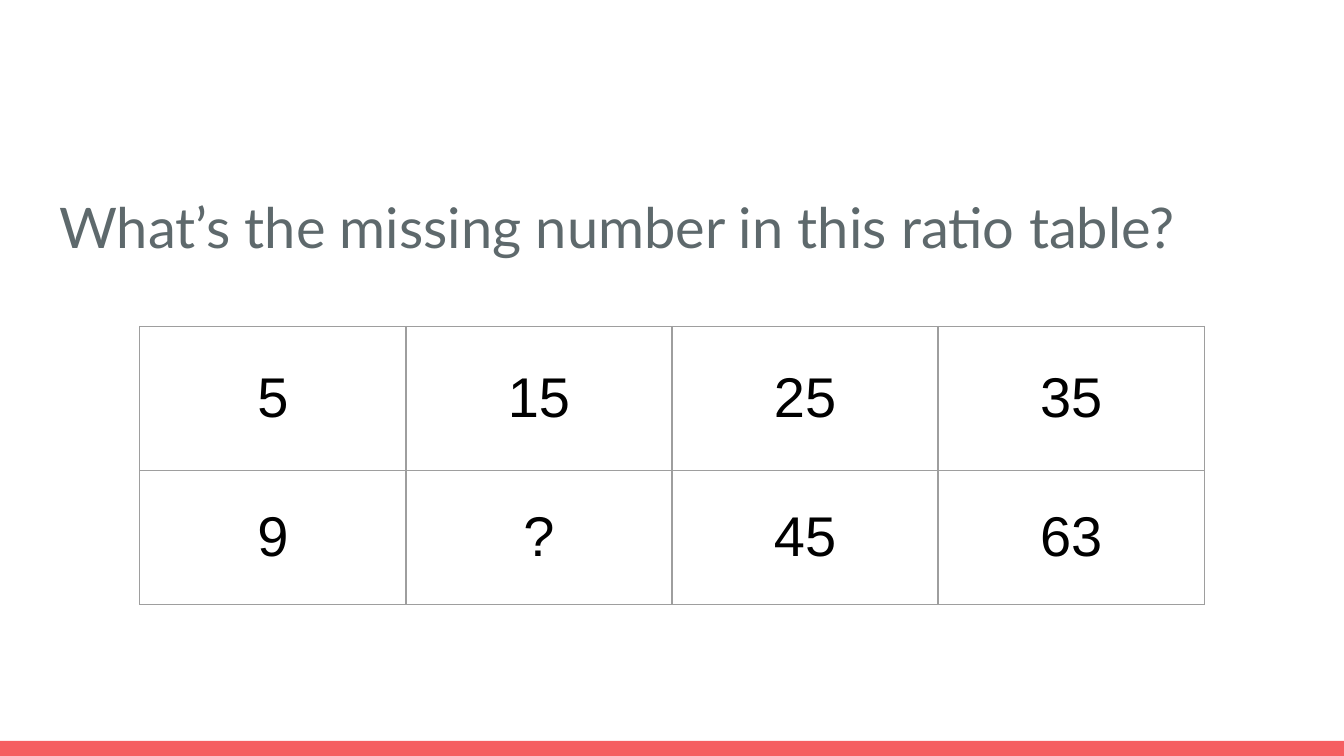
"""Build a slide that asks for the missing number in a ratio table."""
from lxml import etree
from pptx import Presentation
from pptx import util as u
from pptx.dml.color import RGBColor
from pptx.enum import shapes, text
from pptx.oxml.ns import qn

CORAL = RGBColor(0xF5, 0x5E, 0x61)
SLATE = RGBColor(0x5E, 0x69, 0x6C)
GREY = RGBColor(0x9E, 0x9E, 0x9E)
BLACK = RGBColor(0, 0, 0)

WIDTH = u.Inches(10)
HEIGHT = WIDTH * 9 // 16
INSET = u.Inches(0.1)
COLUMN = u.Inches(1.98)
ROW_HEIGHTS = u.Inches(1.07), u.Inches(1)
QUESTION = "What’s the missing number in this ratio table?"
RATIOS = [["5", "15", "25", "35"], ["9", "?", "45", "63"]]


def format_run(p, name, color):
    """Set the font of a paragraph's only run."""
    font = p.runs[0].font
    font.name, font.size, font.bold = name, u.Pt(30), False
    font.color.rgb = color


def set_insets(item):
    """Give a text frame or a cell equal margins."""
    item.margin_left = item.margin_right = INSET
    item.margin_top = item.margin_bottom = INSET


def add_footer_bar(s):
    """Add the coloured strip along the bottom edge."""
    height = round(HEIGHT * 0.02)
    bar = s.shapes.add_shape(shapes.MSO_SHAPE.RECTANGLE, 0, HEIGHT - height, WIDTH, height)
    bar.shadow.inherit = False
    bar.fill.solid()
    bar.fill.fore_color.rgb = CORAL
    bar.line.fill.background()


def fill_question(sp):
    """Place the body placeholder and write the question without a bullet."""
    sp.left, sp.top = u.Inches(0.34), u.Inches(1.26)
    sp.width, sp.height = WIDTH - 2 * sp.left, u.Inches(3.74)
    tf = sp.text_frame
    tf.text = QUESTION
    tf.word_wrap = True
    tf.auto_size = text.MSO_AUTO_SIZE.NONE
    tf.vertical_anchor = text.MSO_ANCHOR.TOP
    set_insets(tf)
    p = tf.paragraphs[0]
    p.alignment = text.PP_ALIGN.LEFT
    p.line_spacing, p.space_before, p.space_after = 1.15, u.Pt(0), u.Pt(16)
    format_run(p, "Lato", SLATE)
    pPr = p._p.get_or_add_pPr()
    pPr.set("marL", "0")
    pPr.set("indent", "0")
    etree.SubElement(pPr, qn("a:buNone"))


def add_borders(cell):
    """Draw a thin grey line on all four sides of a cell."""
    tcPr = cell._tc.get_or_add_tcPr()
    for side in "LRTB":
        ln = etree.SubElement(tcPr, qn(f"a:ln{side}"), w=str(u.Pt(0.75)))
        fill = etree.SubElement(ln, qn("a:solidFill"))
        etree.SubElement(fill, qn("a:srgbClr"), val=str(GREY))


def format_cell(cell, value):
    """Write a centred number in a bordered, unfilled cell."""
    cell.text = value
    cell.vertical_anchor = text.MSO_ANCHOR.MIDDLE
    set_insets(cell)
    p = cell.text_frame.paragraphs[0]
    p.alignment = text.PP_ALIGN.CENTER
    format_run(p, "Arial", BLACK)
    add_borders(cell)
    cell.fill.background()


def add_ratio_table(s):
    """Add the ratio table, centred across the slide."""
    rows, columns = len(RATIOS), len(RATIOS[0])
    width = columns * COLUMN
    frame = s.shapes.add_table(rows, columns, (WIDTH - width) // 2, u.Inches(2.43),
                               width, sum(ROW_HEIGHTS))
    table = frame.table
    table.first_row = table.horz_banding = False
    for column in table.columns:
        column.width = COLUMN
    for r, (height, values) in enumerate(zip(ROW_HEIGHTS, RATIOS)):
        table.rows[r].height = height
        for c, value in enumerate(values):
            format_cell(table.cell(r, c), value)


def main():
    """Build and save the slide."""
    prs = Presentation()
    prs.slide_width, prs.slide_height = WIDTH, HEIGHT
    s = prs.slides.add_slide(prs.slide_layouts[1])
    title = s.shapes.title._element
    title.getparent().remove(title)
    fill_question(s.placeholders[1])
    add_footer_bar(s)
    add_ratio_table(s)
    prs.save("out.pptx")


if __name__ == "__main__":
    main()
